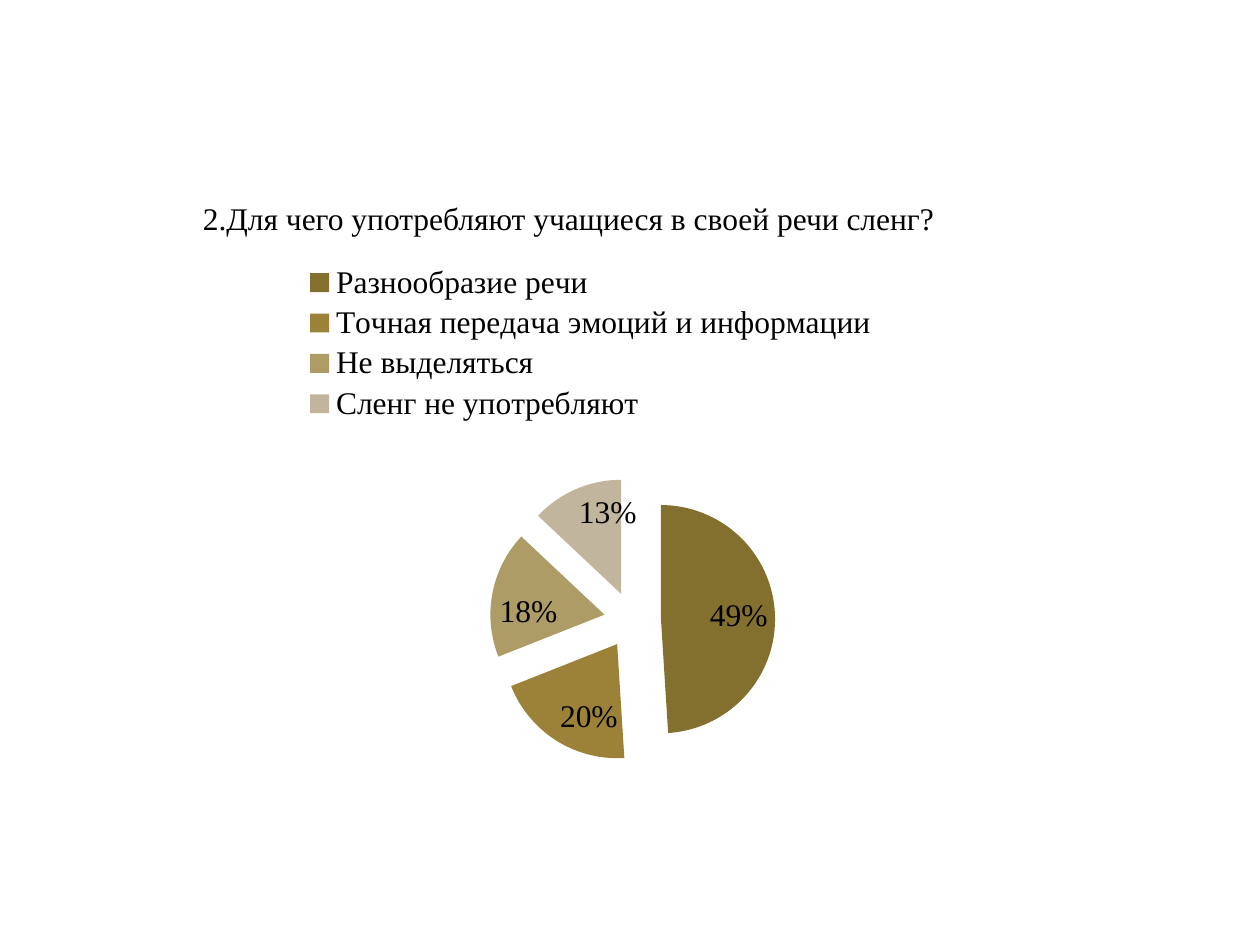
from lxml import etree
from pptx import Presentation
from pptx.chart.data import CategoryChartData
from pptx.dml.color import RGBColor
from pptx.enum.chart import XL_CHART_TYPE, XL_LABEL_POSITION, XL_LEGEND_POSITION
from pptx.enum.text import MSO_ANCHOR, MSO_AUTO_SIZE
from pptx.oxml import parse_xml
from pptx.oxml.ns import nsdecls, qn
from pptx.util import Pt

PIE = XL_CHART_TYPE.PIE
INSIDE_END = XL_LABEL_POSITION.INSIDE_END
LEGEND_TOP = XL_LEGEND_POSITION.TOP
ANCHOR_TOP = MSO_ANCHOR.TOP
NO_AUTOFIT = MSO_AUTO_SIZE.NONE

FONT_NAME = "Times New Roman"
FONT_SIZE = 18
BLACK = "000000"
ANSWERS = [
    ("Разнообразие речи", 49, "84702E"),
    ("Точная передача эмоций и информации", 20, "9B8238"),
    ("Не выделяться", 18, "AD9C66"),
    ("Сленг не употребляют", 13, "C1B59D"),
]


def color(hex_value):
    return RGBColor.from_string(hex_value)


def manual_layout(x, y, width, height, target=""):
    """Return a c:layout element placed by fractions of the chart area."""
    return parse_xml(
        f'<c:layout {nsdecls("c")}><c:manualLayout>{target}'
        '<c:xMode val="edge"/><c:yMode val="edge"/>'
        f'<c:x val="{x}"/><c:y val="{y}"/><c:w val="{width}"/><c:h val="{height}"/>'
        '</c:manualLayout></c:layout>'
    )


presentation = Presentation()
presentation.slide_width = Pt(720)
presentation.slide_height = Pt(540)
slide = presentation.slides.add_slide(presentation.slide_layouts[1])
title = slide.shapes.title.element
title.getparent().remove(title)

# Question
question = slide.placeholders[1]
question.left, question.top = Pt(108.7), Pt(99.4)
question.width, question.height = Pt(504), Pt(239.8)
frame = question.text_frame
frame.word_wrap = True
frame.auto_size = NO_AUTOFIT
frame.vertical_anchor = ANCHOR_TOP
paragraph = frame.paragraphs[0]
paragraph.text = "2.Для чего употребляют учащиеся в своей речи сленг?"
paragraph.line_spacing = 1.5
paragraph.space_before = Pt(0)
properties = paragraph._p.get_or_add_pPr()
properties.set("marL", "0")
properties.set("indent", "0")
etree.SubElement(properties, qn("a:buNone"))
run_font = paragraph.runs[0].font
run_font.name = FONT_NAME
run_font.size = Pt(FONT_SIZE)
run_font.color.rgb = color(BLACK)

# Pie chart of the answers
chart_data = CategoryChartData()
chart_data.categories = [name for name, value, fill in ANSWERS]
chart_data.add_series("Series 1", [value for name, value, fill in ANSWERS])
chart = slide.shapes.add_chart(
    PIE, Pt(102.2), Pt(141.8), Pt(480.2), Pt(319.7), chart_data
).chart
chart.has_title = False
chart.font.name = FONT_NAME
chart.font.size = Pt(FONT_SIZE)
chart.font.color.rgb = color(BLACK)

plot = chart.plots[0]
plot.vary_by_categories = True
series = plot.series[0]
for index, (name, value, fill) in enumerate(ANSWERS):
    point_format = series.points[index].format
    point_format.fill.solid()
    point_format.fill.fore_color.rgb = color(fill)
    point_format.line.fill.background()
explosion = parse_xml(f'<c:explosion {nsdecls("c")} val="25"/>')
series._element.find(qn("c:dPt")).addprevious(explosion)

plot.has_data_labels = True
labels = plot.data_labels
labels.show_percentage = True
labels.show_value = False
labels.number_format = "0%"
labels.number_format_is_linked = False
labels.position = INSIDE_END

chart.has_legend = True
legend = chart.legend
legend.position = LEGEND_TOP
legend.include_in_layout = False

# Legend above, pie below
plot_area = plot._element.getparent()
for part in (plot_area, legend._element):
    for layout in part.findall(qn("c:layout")):
        part.remove(layout)
inner = '<c:layoutTarget val="inner"/>'
plot_area.insert(0, manual_layout(0.37, 0.41, 0.34, 0.51, inner))
legend._element.find(qn("c:legendPos")).addnext(manual_layout(0.15, 0.02, 0.68, 0.3))

presentation.save("out.pptx")
